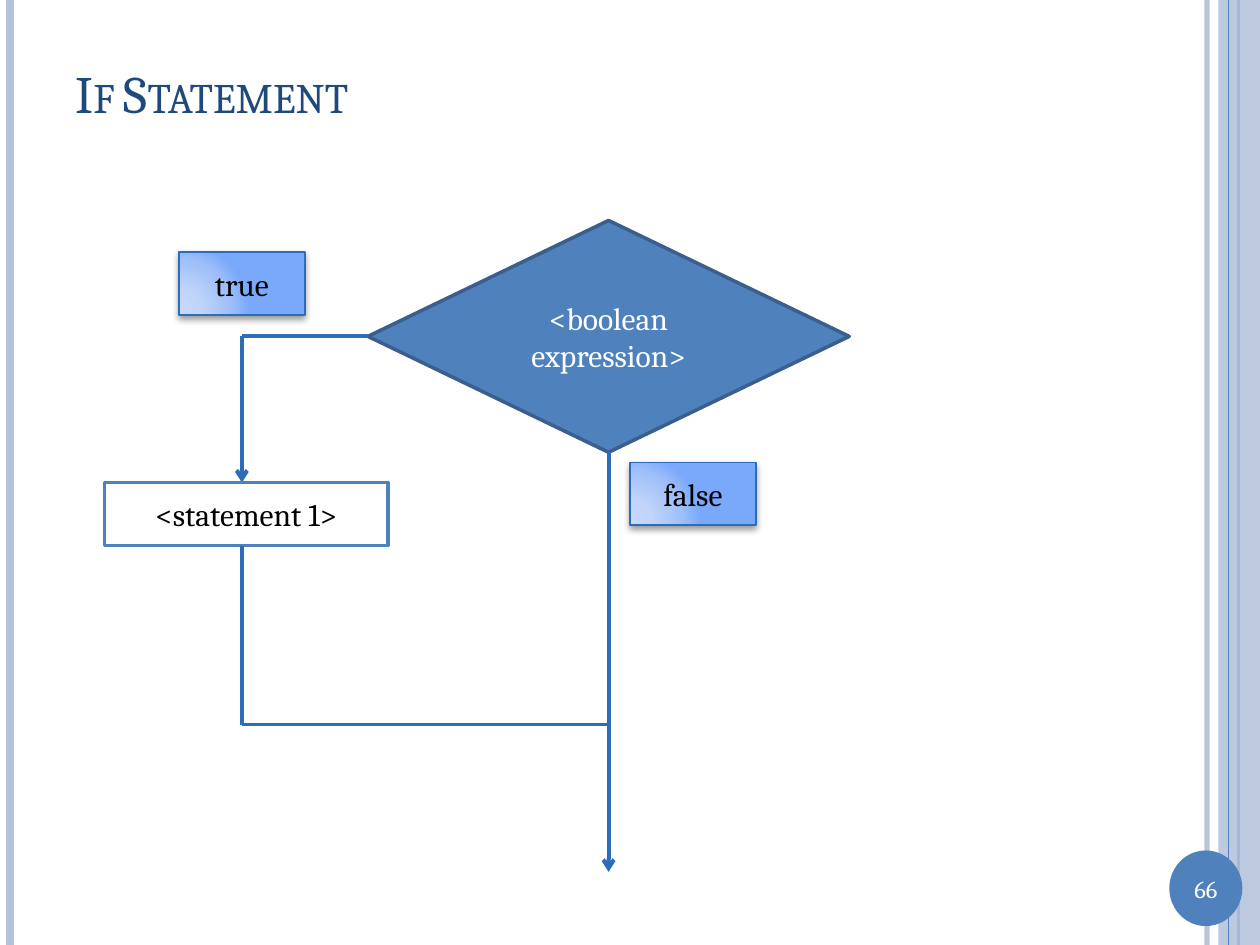
from lxml import etree
from pptx import Presentation
from pptx.dml.color import RGBColor
from pptx.enum.shapes import MSO_CONNECTOR, MSO_SHAPE
from pptx.enum.text import MSO_ANCHOR, PP_ALIGN
from pptx.oxml import parse_xml
from pptx.oxml.ns import qn
from pptx.util import Inches, Pt

RECT, OVAL = MSO_SHAPE.RECTANGLE, MSO_SHAPE.OVAL
CHOICE = MSO_SHAPE.FLOWCHART_DECISION
LINE = MSO_CONNECTOR.STRAIGHT
MID = MSO_ANCHOR.MIDDLE
LEFT, CENTER = PP_ALIGN.LEFT, PP_ALIGN.CENTER
NS = "http://schemas.openxmlformats.org/drawingml/2006/main"

WIDE, HIGH = 10, 7.5
BLUE, PALE, FLOW, NAVY = "4F81BD", "B3C1DB", "2C6CB9", "1F497D"
WHITE, BLACK = "FFFFFF", "000000"
FONT = "Cambria"

RULES = [(9.58, PALE, 3, 93), (0.08, PALE, 4.5, 100), (9.83, BLUE, 1.5, 100)]
TEST = (2.92, 1.75, 3.82, 1.84)
STEP = (0.83, 3.83, 2.25, 0.5)
TAGS = [("true", 1.42, 2), ("false", 5, 3.67)]
TAG_SIZE = (1, 0.5)
STOPS = [(0, "C7D8FB"), (30, "C1D5FA"), (75, "9FBFF9"), (100, "7AA9FB")]

SIDE = 1.92
MAIN = TEST[0] + TEST[2] / 2
TURN = TEST[1] + TEST[3] / 2
JOIN, END = 5.75, 6.92


def color(code):
    return RGBColor.from_string(code)


def fade(shape, share):
    if share < 100:
        tint = next(shape._element.spPr.iter(qn("a:srgbClr")))
        etree.SubElement(tint, qn("a:alpha"), val=str(share * 1000))


def write(shape, text, size, tone, align=CENTER):
    frame = shape.text_frame
    frame.word_wrap = True
    frame.vertical_anchor = MID
    para = frame.paragraphs[0]
    para.alignment = align
    run = para.add_run()
    run.text = text
    run.font.size = Pt(size)
    run.font.name = FONT
    run.font.color.rgb = color(tone)
    return run


def block(kind, box, fill=None, edge=None, width=0):
    shape = slide.shapes.add_shape(kind, *map(Inches, box))
    shape.shadow.inherit = False
    if fill:
        shape.fill.solid()
        shape.fill.fore_color.rgb = color(fill)
    if edge:
        shape.line.color.rgb = color(edge)
        shape.line.width = Pt(width)
    else:
        shape.line.fill.background()
    return shape


def link(start, stop, tone=FLOW, width=2.25, arrow=False):
    line = slide.shapes.add_connector(LINE, *map(Inches, start + stop))
    line.line.color.rgb = color(tone)
    line.line.width = Pt(width)
    props = line._element.spPr
    if arrow:
        etree.SubElement(props.find(qn("a:ln")), qn("a:tailEnd"), type="arrow")
    etree.SubElement(props, qn("a:effectLst"))
    return line


def label(text, left, top):
    shape = block(RECT, (left, top) + TAG_SIZE, None, FLOW, 1)
    stops = "".join(
        f'<a:gs pos="{pos * 1000}"><a:srgbClr val="{tone}"/></a:gs>'
        for pos, tone in STOPS)
    props = shape._element.spPr
    props.insert(2, parse_xml(
        f'<a:gradFill xmlns:a="{NS}" rotWithShape="1"><a:gsLst>{stops}</a:gsLst>'
        '<a:path path="circle"><a:fillToRect l="5000" t="100000" '
        'r="120000" b="10000"/></a:path></a:gradFill>'))
    props.find(qn("a:effectLst")).append(parse_xml(
        f'<a:outerShdw xmlns:a="{NS}" blurRad="{Pt(4)}" dist="{Pt(2)}" '
        'dir="5400000" rotWithShape="0"><a:srgbClr val="000000">'
        '<a:alpha val="40000"/></a:srgbClr></a:outerShdw>'))
    write(shape, text, 18, BLACK)


deck = Presentation()
deck.slide_width, deck.slide_height = Inches(WIDE), Inches(HIGH)
slide = deck.slides.add_slide(deck.slide_layouts[6])

for x, tone, width, share in RULES:
    fade(link((x, 0), (x, HIGH), tone, width), share)
fade(block(RECT, (9.67, 0, 0.33, HIGH), PALE), 87)
link((9.75, 0), (9.75, HIGH), BLUE, 0.75)
block(OVAL, (9.28, 6.75, 0.58, 0.6), BLUE)
page = slide.shapes.add_textbox(*map(Inches, (9.28, 6.88, 0.58, 0.34)))
write(page, "66", 14, WHITE)

title = slide.shapes.add_textbox(*map(Inches, (0.5, 0.3, 8.67, 0.87)))
head = write(title, "If Statement", 30, NAVY, LEFT)
head.font._element.set("cap", "small")

test = block(CHOICE, TEST, BLUE, "3A5F8C", 2)
write(test, "<boolean expression>", 18, WHITE)
link((TEST[0], TURN), (SIDE, TURN)).begin_connect(test, 1)
link((SIDE, TURN), (SIDE, STEP[1]), arrow=True)
link((MAIN, TEST[1] + TEST[3]), (MAIN, END), arrow=True).begin_connect(test, 2)
step = block(RECT, STEP, WHITE, BLUE, 2)
write(step, "<statement 1>", 18, BLACK)
link((SIDE, STEP[1] + STEP[3]), (SIDE, JOIN))
link((MAIN, JOIN), (SIDE, JOIN))
for tag in TAGS:
    label(*tag)

deck.save("out.pptx")
